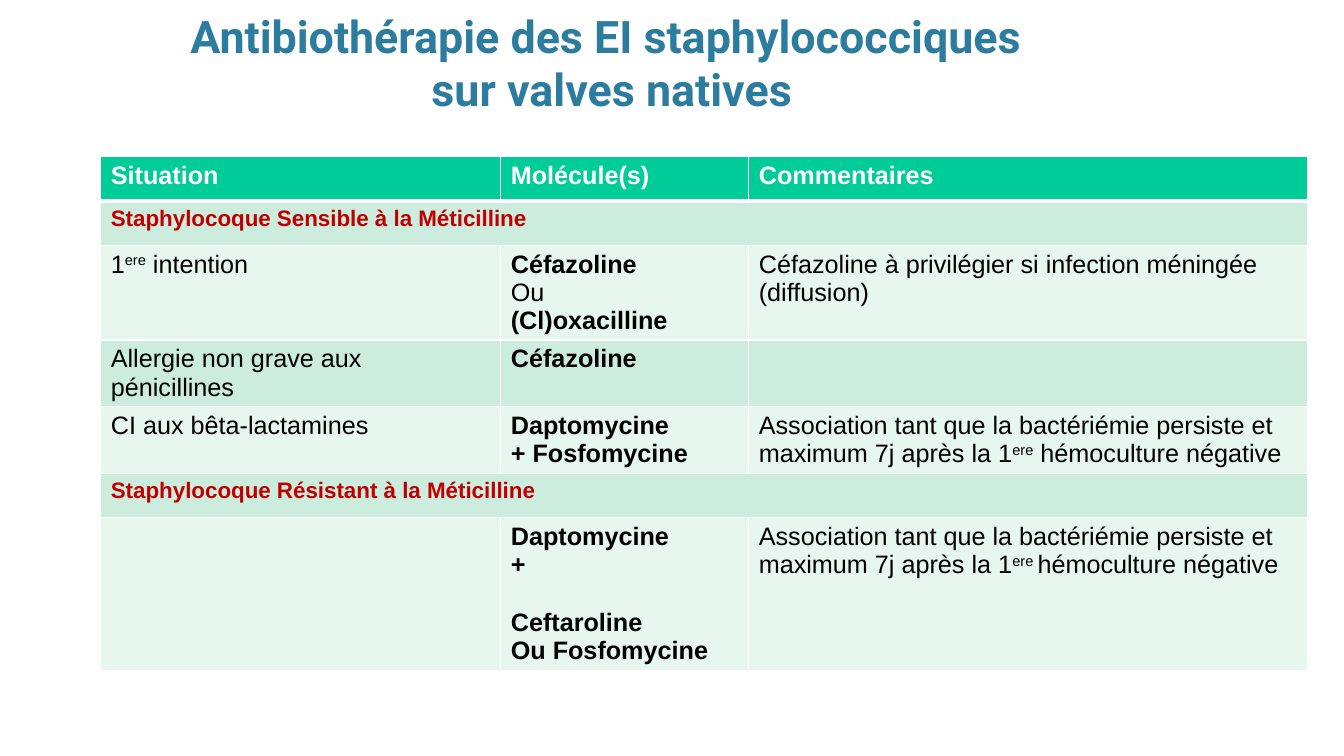
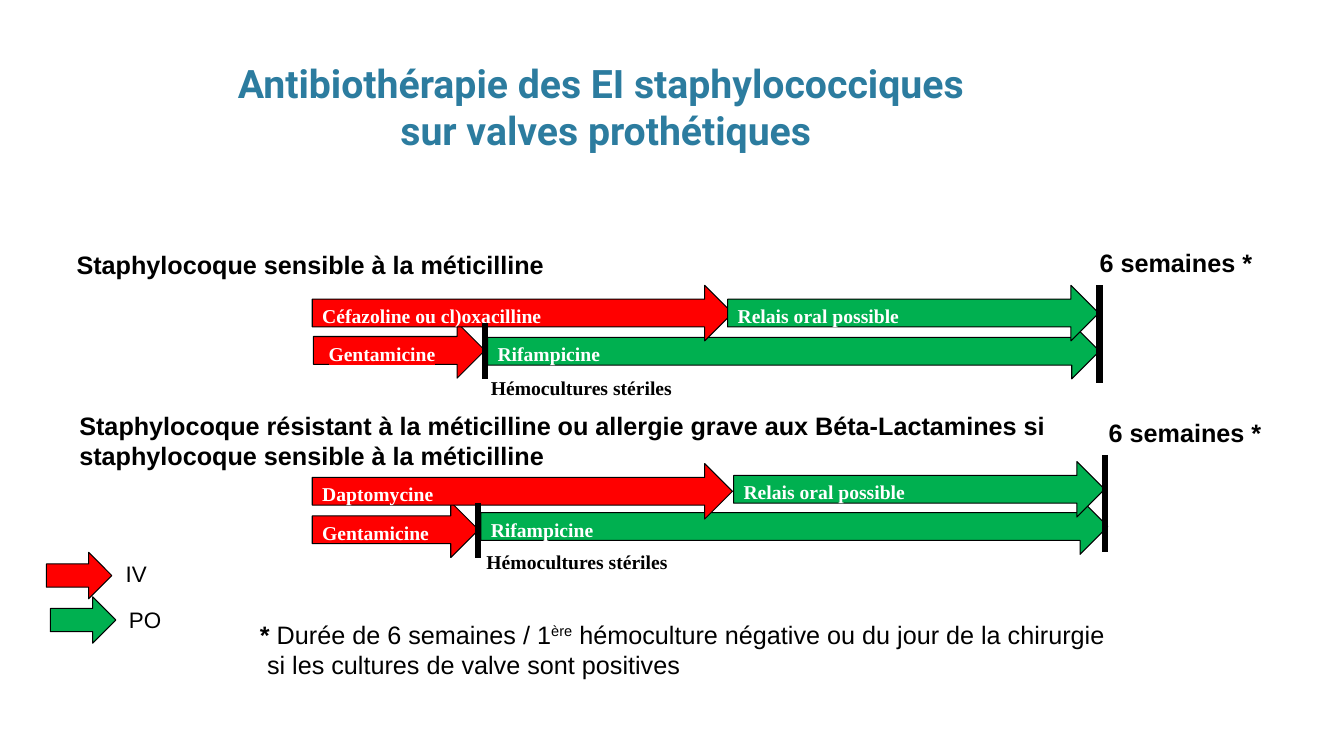
from lxml import etree
from pptx import Presentation
from pptx import util as u
from pptx.dml.color import RGBColor
from pptx.enum import shapes, text
from pptx.oxml import ns

WHITE, BLACK = "FFFFFF", "000000"
TITLE_BLUE, HEADER_GREEN = "2C7C9F", "00CC99"
SECTION_GREEN, ROW_GREEN, SECTION_RED = "CCECDE", "E7F6EF", "C00000"
IV_RED, ORAL_GREEN = "FF0000", "00B050"
SANS, SERIF, TITLE_FONT = "Arial", "Times New Roman", "Roboto"
ARROW_HEIGHT = 1.4


def rgb(value):
    return RGBColor.from_string(value)


def solid_fill(parent, tag, colour):
    element = etree.SubElement(parent, ns.qn(tag))
    etree.SubElement(element, ns.qn("a:srgbClr")).set("val", colour)


def set_font(paragraph, size, colour, bold=False, name=SANS):
    font = paragraph.font
    font.size, font.name, font.bold = u.Pt(size), name, bold
    font.color.rgb = rgb(colour)


def superscript(words):
    return words, {"baseline": "30000"}


def strong(words):
    return words, {"b": "1"}


def add_runs(paragraph, parts):
    for part in [parts] if isinstance(parts, str) else parts:
        words, traits = (part, {}) if isinstance(part, str) else part
        run = paragraph.add_run()
        run.text = words
        for trait, value in traits.items():
            run.font._element.set(trait, value)


def add_title(slide, line_one, line_two, left, top, width, size):
    title = slide.shapes.title
    title.left, title.top, title.width, title.height = (
        u.Cm(left), u.Cm(top), u.Cm(width), u.Cm(1.73))
    frame = title.text_frame
    frame.auto_size = text.MSO_AUTO_SIZE.NONE
    frame.vertical_anchor = text.MSO_ANCHOR.BOTTOM
    paragraph = frame.paragraphs[0]
    paragraph.text = f"{line_one} \v{line_two}"
    paragraph.alignment = text.PP_ALIGN.CENTER
    set_font(paragraph, size, TITLE_BLUE, True, TITLE_FONT)


def add_label(slide, lines, left, top, width, size=18, bold=False, name=SANS):
    label = slide.shapes.add_textbox(
        u.Cm(left), u.Cm(top), u.Cm(width), u.Cm(0.95))
    frame = label.text_frame
    frame.word_wrap = True
    for index, parts in enumerate(lines):
        paragraph = frame.add_paragraph() if index else frame.paragraphs[0]
        add_runs(paragraph, parts)
        set_font(paragraph, size, BLACK, bold, name)
    return frame


def add_arrow(slide, colour, left, top, width, height=ARROW_HEIGHT, drug=None):
    arrow = slide.shapes.add_shape(
        shapes.MSO_SHAPE.RIGHT_ARROW,
        u.Cm(left), u.Cm(top), u.Cm(width), u.Cm(height))
    arrow.shadow.inherit = False
    arrow.fill.solid()
    arrow.fill.fore_color.rgb = rgb(colour)
    arrow.line.color.rgb = rgb(BLACK)
    arrow.line.width = u.Pt(0.75)
    if drug:
        frame = arrow.text_frame
        frame.vertical_anchor = text.MSO_ANCHOR.TOP
        paragraph = frame.paragraphs[0]
        paragraph.alignment = text.PP_ALIGN.LEFT
        add_runs(paragraph, drug)
        set_font(paragraph, 14, WHITE, True, SERIF)
    return arrow


def add_marker(slide, x, top, height):
    marker = slide.shapes.add_connector(
        shapes.MSO_CONNECTOR.STRAIGHT,
        u.Cm(x), u.Cm(top), u.Cm(x), u.Cm(top + height))
    marker.line.color.rgb = rgb(BLACK)
    marker.line.width = u.Pt(4.5)
    etree.SubElement(marker._element.spPr, ns.qn("a:effectLst"))


def highlight(arrow, colour):
    frame = arrow.text_frame
    frame.margin_left = u.Cm(0.38)
    properties = frame.paragraphs[0].runs[0].font._element
    solid_fill(properties, "a:highlight", colour)


def style_cell(cell, colour, top_width, bottom_width):
    properties = cell._tc.get_or_add_tcPr()
    for side, width in zip("LRTB", (1, 1, top_width, bottom_width)):
        border = etree.SubElement(properties, ns.qn(f"a:ln{side}"))
        border.set("w", str(u.Pt(width)))
        solid_fill(border, "a:solidFill", WHITE)
    cell.fill.solid()
    cell.fill.fore_color.rgb = rgb(colour)


def write_cell(cell, lines, size, colour, bold):
    for index, parts in enumerate(lines):
        paragraph = (cell.text_frame.add_paragraph() if index
                     else cell.text_frame.paragraphs[0])
        add_runs(paragraph, parts)
        set_font(paragraph, size, colour, bold)


def add_treatment_table(slide):
    combination = "Association tant que la bactériémie persiste et maximum 7j après la 1"
    rows = [
        (1.12, [["Situation"], ["Molécule(s)"], ["Commentaires"]]),
        (1.12, [["Staphylocoque Sensible à la Méticilline"]]),
        (2.36, [[["1", superscript("ere"), " intention"]],
                [[strong("Céfazoline")], "Ou", [strong("(Cl)oxacilline")]],
                ["Céfazoline à privilégier si infection méningée (diffusion)"]]),
        (1.68, [["Allergie non grave aux pénicillines"],
                [[strong("Céfazoline")]], []]),
        (1.68, [["CI aux bêta-lactamines"],
                [[strong("Daptomycine")], [strong("+ Fosfomycine")]],
                [[combination, superscript("ere"), " hémoculture négative"]]]),
        (1.12, [["Staphylocoque Résistant à la Méticilline"]]),
        (3.83, [[],
                [[strong("Daptomycine")], [strong("+")],
                 [strong("Ceftaroline")], [strong("Ou Fosfomycine")]],
                [[combination, superscript("ere "), "hémoculture négative"]]]),
    ]
    table = slide.shapes.add_table(
        len(rows), 3, u.Cm(2.54), u.Cm(3.94), u.Cm(30.42),
        u.Cm(sum(height for height, _ in rows))).table
    for column, width in zip(table.columns, (10.08, 6.25, 14.09)):
        column.width = u.Cm(width)
    for index, (height, contents) in enumerate(rows):
        table.rows[index].height = u.Cm(height)
        is_section = len(contents) == 1
        if index == 0:
            fill, size, colour = HEADER_GREEN, 18, WHITE
        elif is_section:
            fill, size, colour = SECTION_GREEN, 16, SECTION_RED
        else:
            fill, size, colour = (ROW_GREEN, SECTION_GREEN)[index % 2], 18, BLACK
        for column in range(3):
            style_cell(table.cell(index, column), fill,
                       3 if index == 1 else 1, 3 if index == 0 else 1)
        if is_section:
            table.cell(index, 0).merge(table.cell(index, 2))
        for column, lines in enumerate(contents):
            write_cell(table.cell(index, column), lines, size, colour,
                       index == 0 or is_section)
    table.cell(6, 1).text_frame.paragraphs[2].space_before = u.Pt(21)


def add_regimen(slide, heading, weeks, gentamicin, rifampicin, main_drug,
                relay, sterile_line, sterile_label, end_line):
    words, left, top, width = heading
    add_label(slide, [words], left, top, width, bold=True)
    add_label(slide, ["6 semaines *"], *weeks, 5, bold=True)
    gentamicin_arrow = add_arrow(slide, IV_RED, *gentamicin, drug="Gentamicine")
    add_arrow(slide, ORAL_GREEN, *rifampicin, drug="Rifampicine")
    drug, left, top = main_drug
    add_arrow(slide, IV_RED, left, top, 10.59, drug=drug)
    add_marker(slide, *sterile_line, ARROW_HEIGHT)
    add_label(slide, ["Hémocultures stériles"], *sterile_label, 5.5,
              size=14, bold=True, name=SERIF)
    add_arrow(slide, ORAL_GREEN, *relay, 9.35, drug="Relais oral possible")
    add_marker(slide, *end_line, 2.46)
    return gentamicin_arrow


def add_legend(slide):
    for words, colour, arrow_at, label_at in (
            ("IV", IV_RED, (1.17, 13.92), (2.92, 14)),
            ("PO", ORAL_GREEN, (1.27, 15.04), (3, 15.16))):
        add_arrow(slide, colour, *arrow_at, 1.65, 1.17)
        add_label(slide, [words], *label_at, 1.4, size=16)


def add_footnote(slide):
    frame = add_label(slide, [
        [strong("* "), "Durée de 6 semaines / 1", superscript("ère"),
         " hémoculture négative ou du jour de la chirurgie"],
        "si les cultures de valve sont positives"], 6.3, 15.47, 26.29)
    indent = frame.paragraphs[1]._p.get_or_add_pPr()
    indent.set("marL", str(u.Cm(0.18)))


def build_native_valves(slide):
    add_title(slide, "Antibiothérapie des EI staphylococciques",
              "sur valves natives", 2.54, 1.32, 25.76, 32)
    add_treatment_table(slide)


def build_prosthetic_valves(slide):
    add_title(slide, "Antibiothérapie des EI staphylococciques",
              "sur valves prothétiques", 4.32, 2.26, 21.89, 28)
    gentamicin_arrow = add_regimen(
        slide,
        heading=("Staphylocoque sensible à la méticilline", 1.68, 6.15, 14.33),
        weeks=(27.46, 6.12),
        gentamicin=(7.9, 8.13, 4.32),
        rifampicin=(12.29, 8.15, 15.42),
        main_drug=("Céfazoline ou cl)oxacilline", 7.87, 7.19),
        relay=(18.34, 7.19),
        sterile_line=(12.22, 8.15),
        sterile_label=(12.12, 9.35),
        end_line=(27.71, 7.19))
    highlight(gentamicin_arrow, IV_RED)
    add_regimen(
        slide,
        heading=("Staphylocoque résistant à la méticilline ou allergie grave "
                 "aux Béta-Lactamines si staphylocoque sensible à la méticilline",
                 1.75, 10.21, 25.98),
        weeks=(27.69, 10.39),
        gentamicin=(7.87, 12.65, 4.19),
        rifampicin=(12.12, 12.57, 15.8),
        main_drug=("Daptomycine", 7.87, 11.68),
        relay=(18.49, 11.63),
        sterile_line=(12.04, 12.67),
        sterile_label=(12.01, 13.72),
        end_line=(27.84, 11.46))
    add_legend(slide)
    add_footnote(slide)


def main():
    deck = Presentation()
    deck.slide_width, deck.slide_height = u.Cm(33.87), u.Cm(19.05)
    for build in (build_native_valves, build_prosthetic_valves):
        build(deck.slides.add_slide(deck.slide_layouts[5]))
    deck.save("out.pptx")


if __name__ == "__main__":
    main()
